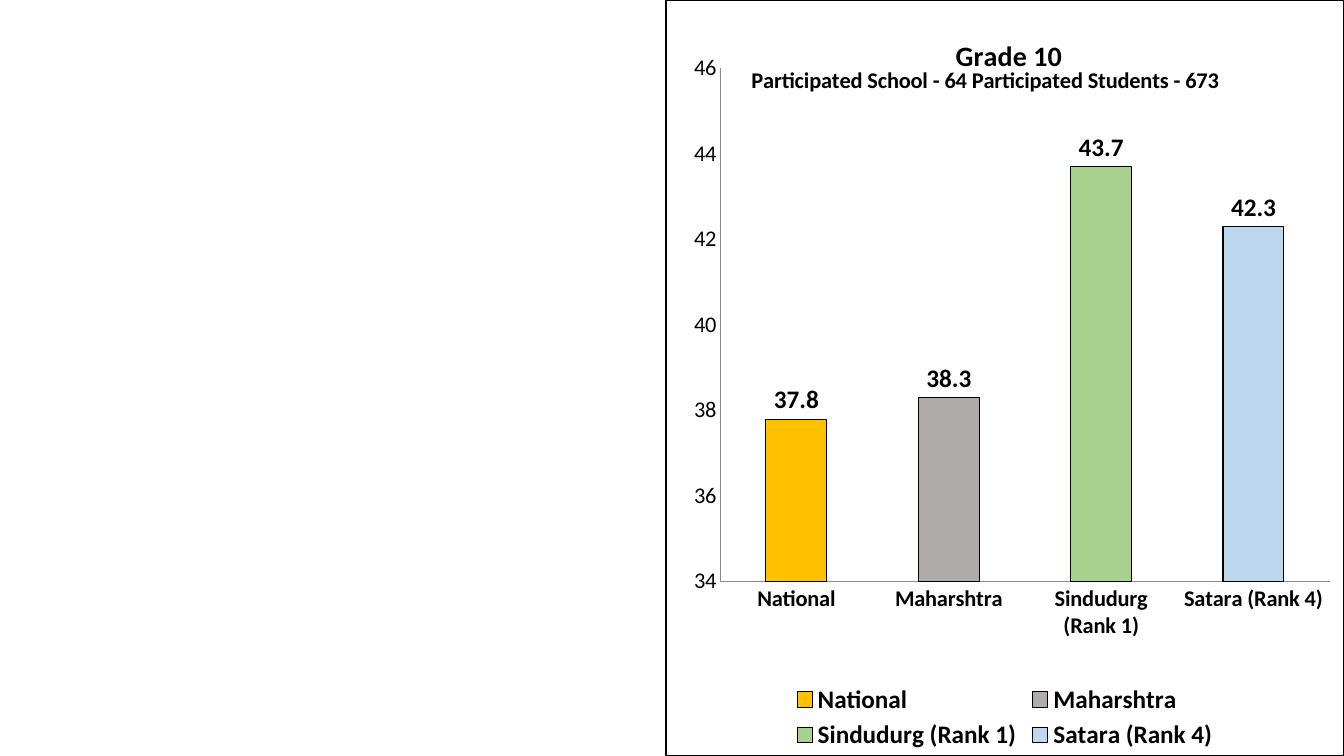
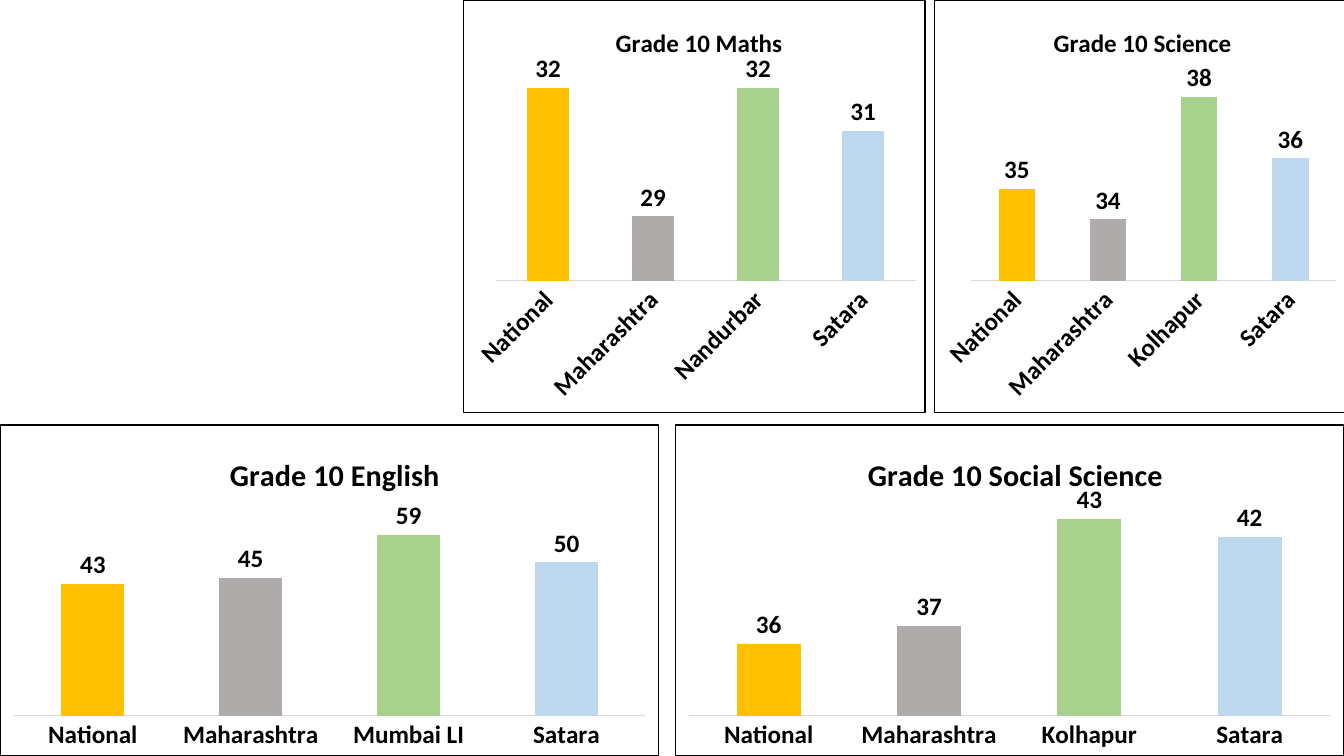
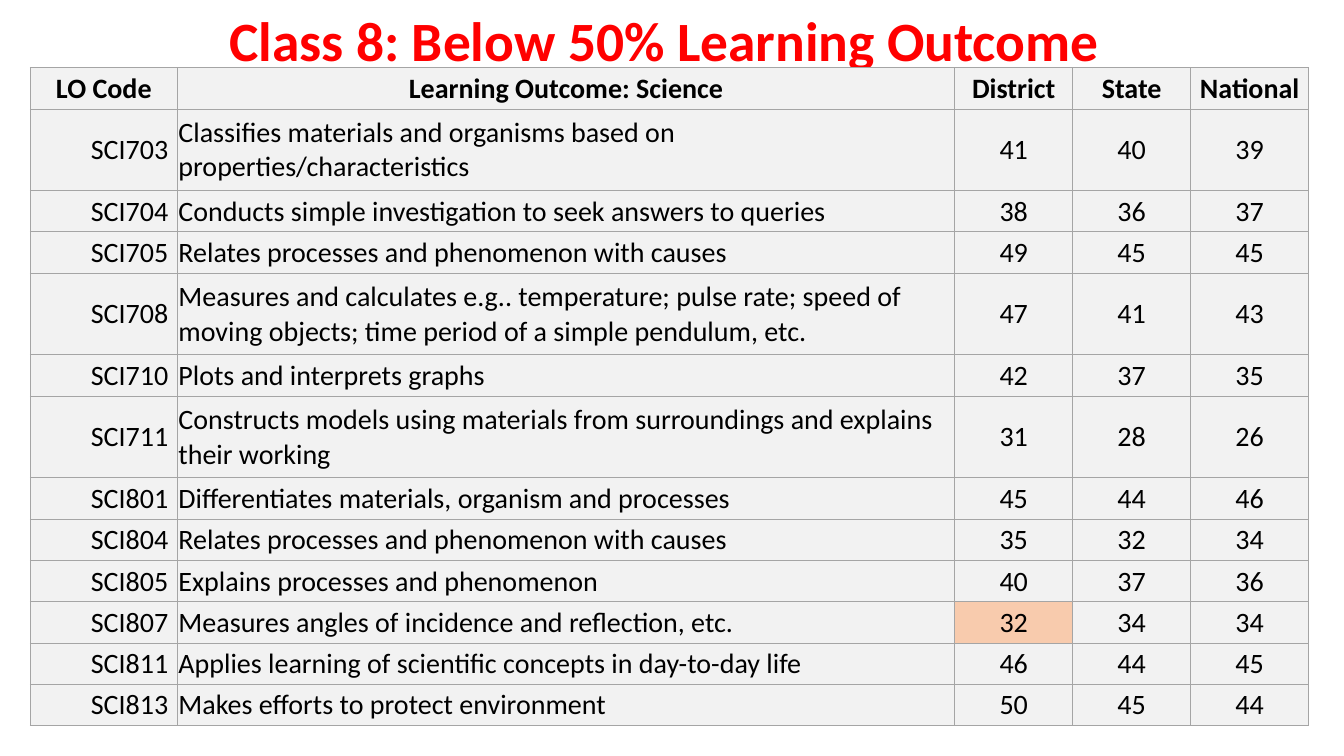
from lxml import etree
from pptx import Presentation
from pptx.chart.data import CategoryChartData
from pptx.dml.color import RGBColor as RGB
from pptx.enum.chart import XL_CHART_TYPE, XL_LEGEND_POSITION, XL_TICK_MARK
from pptx.enum.text import MSO_ANCHOR, PP_ALIGN
from pptx.oxml import parse_xml
from pptx.oxml.ns import nsdecls, qn
from pptx.util import Inches, Pt

THEME = dict(
    font="Calibri", black="000000", white="FFFFFF", red="FF0000",
    axis="8B8B8B", baseline="D9D9D9", cell="F2F2F2", low="F8CBAD", grid="A5A5A5",
    bars=["FFC000", "AFABAB", "A9D18E", "BDD7EE"],
    title=39.6, chart_title=20, wide_title=21.6, body=20, label=18, tick=16,
)


def write(tf, text, size=THEME["body"], bold=False, color=THEME["black"], align=None):
    p = tf.paragraphs[0]
    if align is not None:
        p.alignment = align
    r = p.add_run()
    r.text = text
    f = r.font
    f.name, f.size, f.bold = THEME["font"], Pt(size), bold
    f.color.rgb = RGB.from_string(color)
    return p


def set_layout(element, target=None, **fractions):
    """Place a chart title or plot area by fractions of the chart size."""
    for old in element.findall(qn("c:layout")):
        element.remove(old)
    layout = etree.Element(qn("c:layout"))
    manual = etree.SubElement(layout, qn("c:manualLayout"))
    settings = [("layoutTarget", target)] if target else []
    settings += [("xMode", "edge"), ("yMode", "edge"), *fractions.items()]
    for tag, value in settings:
        etree.SubElement(manual, qn("c:" + tag)).set("val", str(value))
    element.insert(0 if element.find(qn("c:tx")) is None else 1, layout)


prs = Presentation()
prs.slide_width, prs.slide_height = Inches(13.33), Inches(7.5)
overall, subjects, outcomes = [prs.slides.add_slide(prs.slide_layouts[6]) for _ in range(3)]

# Slides 1 and 2: bar charts
top_row = dict(slide=subjects, size=THEME["label"], title_y=0.05, slanted=True)
bottom_row = dict(slide=subjects, size=THEME["wide_title"], title_y=0.07, slanted=False)
charts = [
    dict(slide=overall, at=(6.6, 0, 6.73, 7.5), title="Grade 10", size=THEME["chart_title"],
         title_x=0.42, title_y=0.04, series="10th", slanted=False,
         cats=["National", "Maharshtra", "Sindudurg (Rank 1)", "Satara (Rank 4)"],
         values=[37.8, 38.3, 43.7, 42.3], scale=(34, 46), plot=(0.08, 0.09, 0.9, 0.68)),
    dict(top_row, at=(4.59, 0, 4.59, 4.1), title="Grade 10 Maths", title_x=0.32,
         best="Nandurbar", values=[32, 29, 32, 31], scale=(27.5, 32.5),
         plot=(0.07, 0.16, 0.91, 0.52)),
    dict(top_row, at=(9.26, 0, 4.08, 4.1), title="Grade 10 Science", title_x=0.28,
         best="Kolhapur", values=[35, 34, 38, 36], scale=(32, 39),
         plot=(0.09, 0.16, 0.89, 0.52)),
    dict(bottom_row, at=(6.69, 4.21, 6.64, 3.29), title="Grade 10 Social Science",
         title_x=0.28, best="Kolhapur", values=[36, 37, 43, 42], scale=(32, 44),
         plot=(0.02, 0.23, 0.96, 0.65)),
    dict(bottom_row, at=(0, 4.21, 6.54, 3.29), title="Grade 10 English", title_x=0.34,
         best="Mumbai LI", values=[43, 45, 59, 50], scale=(0, 70),
         plot=(0.02, 0.23, 0.96, 0.65)),
]
for c in charts:
    is_overall = c["slide"] is overall
    data = CategoryChartData()
    data.categories = c.get("cats") or ["National", "Maharashtra", c["best"], "Satara"]
    data.add_series(c.get("series", "Series 1"), c["values"])
    chart = c["slide"].shapes.add_chart(
        XL_CHART_TYPE.COLUMN_CLUSTERED, *map(Inches, c["at"]), data).chart
    chart.font.name, chart.font.size = THEME["font"], Pt(THEME["tick"])
    chart.font.color.rgb = RGB.from_string(THEME["black"])
    chart._chartSpace.find(qn("c:chart")).addnext(parse_xml(
        f'<c:spPr {nsdecls("c", "a")}>'
        f'<a:solidFill><a:srgbClr val="{THEME["white"]}"/></a:solidFill>'
        f'<a:ln w="{Pt(1)}"><a:solidFill><a:srgbClr val="{THEME["black"]}"/></a:solidFill></a:ln>'
        '</c:spPr>'))

    write(chart.chart_title.text_frame, c["title"], size=c["size"], bold=True)
    set_layout(chart.chart_title._element, x=c["title_x"], y=c["title_y"])
    plot = chart.plots[0]
    set_layout(plot._element.getparent(), "inner", **dict(zip("xywh", c["plot"])))
    plot.gap_width, plot.overlap = 150, 0 if is_overall else -25
    plot.vary_by_categories = is_overall

    for i, color in enumerate(THEME["bars"]):
        bar = plot.series[0].points[i].format
        bar.fill.solid()
        bar.fill.fore_color.rgb = RGB.from_string(color)
        if is_overall:
            bar.line.color.rgb = RGB.from_string(THEME["black"])
            bar.line.width = Pt(0.75)
    plot.has_data_labels = True
    labels = plot.data_labels
    labels.show_value = True
    labels.font.size, labels.font.bold = Pt(THEME["label"]), True

    cat_axis, val_axis = chart.category_axis, chart.value_axis
    val_axis.minimum_scale, val_axis.maximum_scale = c["scale"]
    val_axis.has_major_gridlines = False
    val_axis.visible = is_overall
    for axis in (cat_axis, val_axis):
        axis.major_tick_mark = XL_TICK_MARK.NONE
        axis.format.line.width = Pt(0.75)
        axis.format.line.color.rgb = RGB.from_string(THEME["axis" if is_overall else "baseline"])
    tick_font = cat_axis.tick_labels.font
    tick_font.bold = True
    tick_font.size = Pt(THEME["tick" if is_overall else "label"])
    if c["slanted"]:
        cat_axis._element.find(qn("c:txPr")).find(qn("a:bodyPr")).set("rot", "-2700000")

    if is_overall:
        val_axis.major_unit = 2
        write(cat_axis.axis_title.text_frame,
              "Participated School - 64 Participated Students - 673",
              size=THEME["tick"], bold=True)
        set_layout(cat_axis.axis_title._element, x=0.12, y=0.08)
        chart.has_legend = True
        chart.legend.position = XL_LEGEND_POSITION.BOTTOM
        chart.legend.include_in_layout = False
        chart.legend.font.size, chart.legend.font.bold = Pt(THEME["label"]), True
    else:
        chart.has_legend = False

# Slide 3: learning outcomes table
tf = outcomes.shapes.add_textbox(
    Inches(0.84), Inches(0.19), Inches(11.5), Inches(0.48)).text_frame
tf.word_wrap = True
tf.vertical_anchor = MSO_ANCHOR.MIDDLE
p = write(tf, "Class 8: Below 50% Learning Outcome", size=THEME["title"], bold=True,
          color=THEME["red"], align=PP_ALIGN.CENTER)
p.line_spacing = 0.9

rows = [
    ("LO Code", "Learning Outcome: Science", "District", "State", "National"),
    ("SCI703", "Classifies materials and organisms based on properties/characteristics", 41, 40, 39),
    ("SCI704", "Conducts simple investigation to seek answers to queries", 38, 36, 37),
    ("SCI705", "Relates processes and phenomenon with causes", 49, 45, 45),
    ("SCI708", "Measures and calculates e.g.. temperature; pulse rate; speed of moving objects; "
               "time period of a simple pendulum, etc.", 47, 41, 43),
    ("SCI710", "Plots and interprets graphs", 42, 37, 35),
    ("SCI711", "Constructs models using materials from surroundings and explains their working",
     31, 28, 26),
    ("SCI801", "Differentiates materials, organism and processes", 45, 44, 46),
    ("SCI804", "Relates processes and phenomenon with causes", 35, 32, 34),
    ("SCI805", "Explains processes and phenomenon", 40, 37, 36),
    ("SCI807", "Measures angles of incidence and reflection, etc.", 32, 34, 34),
    ("SCI811", "Applies learning of scientific concepts in day-to-day life", 46, 44, 45),
    ("SCI813", "Makes efforts to protect environment", 50, 45, 44),
]
widths = [1.46, 7.71, 1.17, 1.17, 1.17]
aligns = [PP_ALIGN.RIGHT, PP_ALIGN.LEFT] + [PP_ALIGN.CENTER] * 3
table = outcomes.shapes.add_table(
    len(rows), len(widths), Inches(0.3), Inches(0.67), Inches(12.67), Inches(6.55)).table
table.first_row = table.horz_banding = False
for column, width in zip(table.columns, widths):
    column.width = Inches(width)
for i, row in enumerate(rows):
    header = i == 0
    table.rows[i].height = Inches(0.81 if len(row[1]) > 60 else 0.41)
    for j, value in enumerate(row):
        cell = table.cell(i, j)
        cell.vertical_anchor = MSO_ANCHOR.MIDDLE
        cell.margin_left = cell.margin_top = Inches(0.01)
        cell.margin_right = Inches(0.09 if j < 2 and not header else 0.01)
        cell.margin_bottom = 0
        is_low = row[0] == "SCI807" and j == 2
        cell.fill.solid()
        cell.fill.fore_color.rgb = RGB.from_string(THEME["low" if is_low else "cell"])
        write(cell.text_frame, str(value), bold=header,
              align=PP_ALIGN.CENTER if header else aligns[j])
        for k, side in enumerate("LRTB"):
            cell._tc.get_or_add_tcPr().insert(k, parse_xml(
                f'<a:ln{side} {nsdecls("a")} w="{Pt(0.5)}"><a:solidFill>'
                f'<a:srgbClr val="{THEME["grid"]}"/></a:solidFill></a:ln{side}>'))

prs.save("out.pptx")
